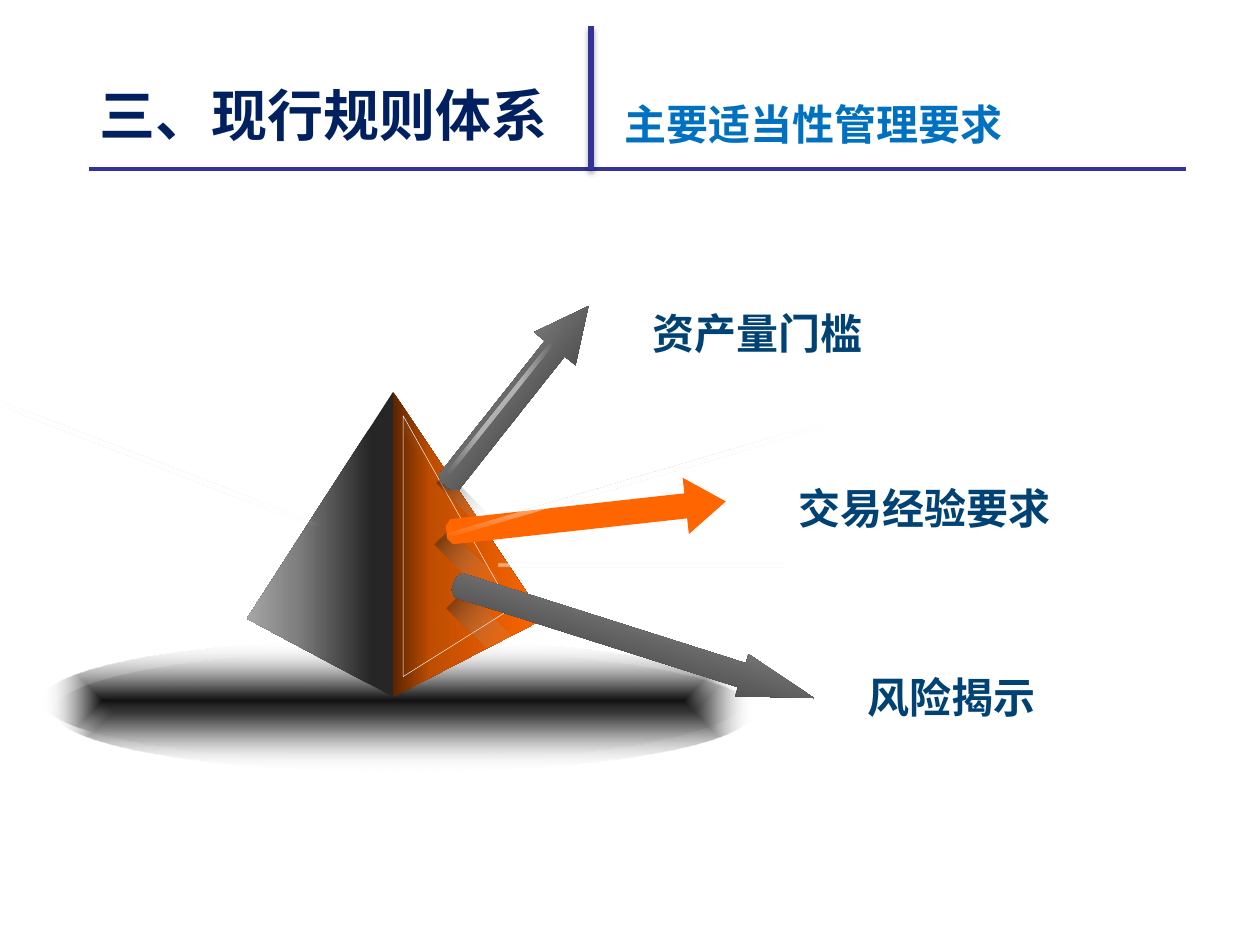
from math import cos, radians, sin

from lxml import etree
from pptx import Presentation
from pptx.dml.color import RGBColor
from pptx.enum.shapes import MSO_CONNECTOR, MSO_SHAPE
from pptx.enum.text import MSO_ANCHOR, MSO_AUTO_SIZE, PP_ALIGN
from pptx.oxml import parse_xml
from pptx.oxml.ns import nsdecls, qn
from pptx.util import Pt

PX = 9144  # EMU per px, 100 px to the inch
FONT = "Noto Sans CJK SC"
ELLIPSE, RECTANGLE = MSO_SHAPE.OVAL, MSO_SHAPE.RECTANGLE
ROUNDED = MSO_SHAPE.ROUNDED_RECTANGLE
STRAIGHT = MSO_CONNECTOR.STRAIGHT
TOP, LEFT = MSO_ANCHOR.TOP, PP_ALIGN.LEFT

COLORS = {"title": "002060", "subtitle": "0070C0", "label": "004274",
          "rule": "333399", "orange": "FF6600", "white": "FFFFFF"}

# Text: wording, box, size, colour
TITLE = ("三、现行规则体系", (71, 60, 390, 116), 32, "title")
SUBTITLE = ("主要适当性管理要求", (488, 74, 500, 49), 24, "subtitle")
LABELS = [("资产量门槛", (508, 219)), ("交易经验要求", (624, 358)), ("风险揭示", (679, 508))]
LABEL_SIZE = (300, 64)

# Gradients: stops (position, colour, opacity), angle or None for a shape path
GREY = ([(15, "262626", 100), (67, "808080", 100), (100, "A6A6A6", 100)], 180)
ORANGE = ([(0, "5C2500", 100), (25, "BF4D00", 100), (100, "FF6600", 100)], 0)
SHEEN = ([(0, "FFFFFF", 30), (36, "FFFFFF", 0)], 135)
GLOSS = ([(37, "FFFFFF", 50), (96, "FFFFFF", 0)], None)
CAST = ([(0, "000000", 50), (87, "FFFFFF", 0)], 90)
GROUND = ([(0, "121212", 100), (100, "FFFFFF", 0)], None)

# Pyramid faces: corners and gradient
FACES = [
    ([(312, 311), (312, 553), (196, 491)], GREY),
    ([(312, 311), (312, 553), (432, 491)], ORANGE),
    ([(320, 330), (320, 537), (406, 483)], SHEEN),
]
CAST_SHADOWS = [(372, 467, 21, 58), (365, 371, 12, 58), (363, 418, 17, 58)]
CAST_ROTATION = 315.1
EDGE_GLOSS = ((105, 204, 4, 315), 111)

# Arrows: tip, length, head width, head length, rotation, gradient; then gloss
ARROWS = [
    (((467, 243), 182, 42, 43, 38.4, GREY), ((395, 256, 4, 136), 38.4)),
    (((576, 398), 223, 45, 32, 83.7, None), ((502, 218, 4, 326), 253.7)),
    (((646, 554), 300, 35, 60, 107.6, GREY), ((506, 335, 4, 227), 90)),
]
SHAFT_HALF, TAIL_CURVE = 10, 4

# Rules: start, end, width, shadow (colour, opacity, blur, distance, angle)
RULES = [((71, 134), (941, 134), 2, None),
         ((469, 21), (469, 135), 3.5, ("000000", 35, 3.1, 1.8, 90))]
GROUND_SHADOW = ("535455", 100, 0, 8.5, 45)


def color(name):
    return RGBColor.from_string(COLORS[name])


def scaled(values):
    return [round(value * PX) for value in values]


def set_gradient(shape, gradient):
    stops, angle = gradient
    stop_xml = "".join(
        f'<a:gs pos="{position * 1000}"><a:srgbClr val="{hex_color}">'
        f'<a:alpha val="{opacity * 1000}"/></a:srgbClr></a:gs>'
        for position, hex_color, opacity in stops)
    if angle is None:
        direction = ('<a:path path="shape"><a:fillToRect l="50000" t="50000" '
                     'r="50000" b="50000"/></a:path>')
    else:
        direction = f'<a:lin ang="{angle * 60000}" scaled="0"/>'
    shape.fill.background()
    properties = shape._element.spPr
    properties.replace(properties.find(qn("a:noFill")), parse_xml(
        f'<a:gradFill rotWithShape="1" {nsdecls("a")}><a:gsLst>{stop_xml}</a:gsLst>'
        f'{direction}</a:gradFill>'))


def set_shadow(shape, shadow):
    properties = shape._element.spPr
    effects = properties.find(qn("a:effectLst"))
    if effects is None:
        effects = etree.SubElement(properties, qn("a:effectLst"))
    if shadow:
        hex_color, opacity, blur, distance, angle = shadow
        effects.append(parse_xml(
            f'<a:outerShdw {nsdecls("a")} blurRad="{Pt(blur)}" dist="{Pt(distance)}" '
            f'dir="{angle * 60000}" algn="ctr" rotWithShape="0"><a:srgbClr val="{hex_color}">'
            f'<a:alpha val="{opacity * 1000}"/></a:srgbClr></a:outerShdw>'))


def finish(shape, gradient, rotation=0):
    if gradient:
        set_gradient(shape, gradient)
    else:
        shape.fill.solid()
        shape.fill.fore_color.rgb = color("orange")
    shape.line.fill.background()
    shape.shadow.inherit = False
    shape.rotation = rotation
    return shape


def add_preset(shapes, kind, box, gradient, rotation=0):
    shape = shapes.add_shape(kind, *scaled(box))
    if kind == ROUNDED:
        shape.adjustments[0] = 0.5
    return finish(shape, gradient, rotation)


def add_polygon(shapes, points, gradient, rotation=0):
    points = [scaled(point) for point in points]
    builder = shapes.build_freeform(*points[0])
    builder.add_line_segments(points[1:], close=True)
    return finish(builder.convert_to_shape(), gradient, rotation)


def add_arrow(shapes, tip, length, head_width, head_length, rotation, gradient):
    """Outline the arrow upright about its centre, then turn it."""
    center_x = tip[0] - length / 2 * sin(radians(rotation))
    center_y = tip[1] + length / 2 * cos(radians(rotation))
    right = [(head_width / 2, head_length), (SHAFT_HALF, head_length),
             (SHAFT_HALF, length - TAIL_CURVE), (SHAFT_HALF / 2, length)]
    outline = [(0, 0)] + right + [(-x, y) for x, y in reversed(right)]
    points = [(center_x + x, center_y - length / 2 + y) for x, y in outline]
    add_polygon(shapes, points, gradient, rotation)


def write_text(shape, text, box, size, color_name, spacing=None, insets=(8, 4)):
    shape.left, shape.top, shape.width, shape.height = scaled(box)
    frame = shape.text_frame
    frame.word_wrap = True
    frame.auto_size = MSO_AUTO_SIZE.SHAPE_TO_FIT_TEXT
    frame.vertical_anchor = TOP
    frame.margin_left = frame.margin_right = insets[0] * PX
    frame.margin_top = frame.margin_bottom = insets[1] * PX
    frame.text = text
    paragraph = frame.paragraphs[0]
    paragraph.alignment = LEFT
    if spacing:
        paragraph.line_spacing = spacing
    font = paragraph.font
    font.size, font.bold, font.name = Pt(size), True, FONT
    font.color.rgb = color(color_name)
    east_asian = etree.SubElement(paragraph._p.pPr.find(qn("a:defRPr")), qn("a:ea"))
    east_asian.set("typeface", FONT)


def main():
    presentation = Presentation()
    presentation.slide_width, presentation.slide_height = scaled((1000, 750))
    slide = presentation.slides.add_slide(presentation.slide_layouts[5])
    shapes = slide.shapes

    # Pyramid on its ground shadow
    ground = add_preset(shapes, ELLIPSE, (34, 508, 556, 96), GROUND)
    set_shadow(ground, GROUND_SHADOW)
    for corners, gradient in FACES:
        face = add_polygon(shapes, corners, gradient)
        if gradient is SHEEN:
            face.line.color.rgb = color("white")
            face.line.width = Pt(0.25)
    add_preset(shapes, ROUNDED, EDGE_GLOSS[0], GLOSS, EDGE_GLOSS[1])

    # Arrows with cast shadows and gloss
    for box in CAST_SHADOWS:
        add_preset(shapes, RECTANGLE, box, CAST, CAST_ROTATION)
    for arrow, (gloss_box, gloss_rotation) in ARROWS:
        add_arrow(shapes, *arrow)
        add_preset(shapes, ROUNDED, gloss_box, GLOSS, gloss_rotation)

    # Labels
    for text, position in LABELS:
        write_text(shapes.add_textbox(0, 0, 0, 0), text, position + LABEL_SIZE,
                   24, "label", spacing=1.5, insets=(10, 5))

    # Heading and its rules
    write_text(shapes.title, *TITLE)
    write_text(shapes.add_textbox(0, 0, 0, 0), *SUBTITLE)
    for start, end, width, shadow in RULES:
        rule = shapes.add_connector(STRAIGHT, *scaled(start + end))
        rule.line.color.rgb = color("rule")
        rule.line.width = Pt(width)
        set_shadow(rule, shadow)

    presentation.save("out.pptx")


if __name__ == "__main__":
    main()
